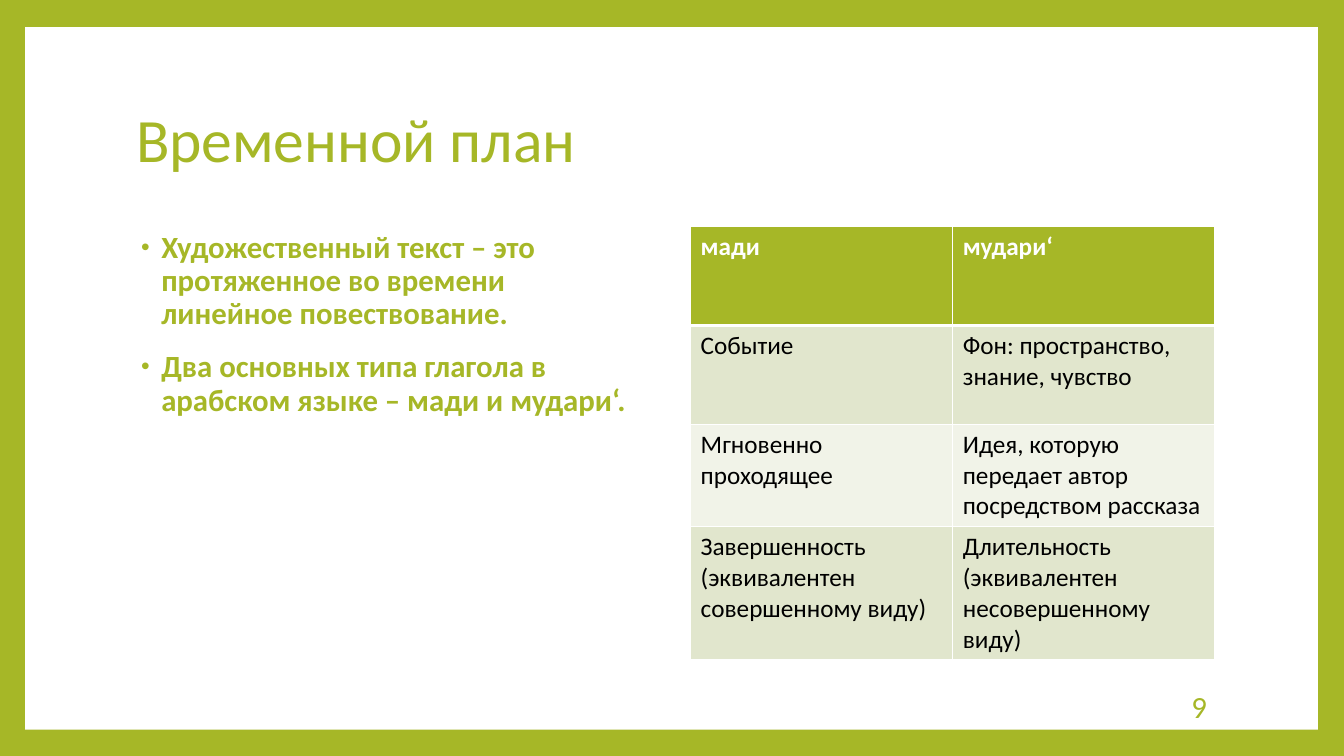
from typing import NamedTuple

from lxml.etree import SubElement
from pptx import Presentation
from pptx.dml.color import RGBColor
from pptx.enum.shapes import MSO_SHAPE
from pptx.enum.text import MSO_ANCHOR, MSO_AUTO_SIZE, PP_ALIGN
from pptx.oxml.ns import qn
from pptx.util import Inches, Pt

GREEN = RGBColor(0xA6, 0xB7, 0x27)
WHITE = RGBColor(0xFF, 0xFF, 0xFF)
BLACK = RGBColor(0, 0, 0)
DARK = RGBColor(0xE1, 0xE6, 0xCD)
LIGHT = RGBColor(0xF1, 0xF3, 0xE8)
FONT = "Calibri"


class Box(NamedTuple):
    left: float
    top: float
    width: float
    height: float


class Row(NamedTuple):
    past: str
    present: str
    fill: RGBColor = DARK
    color: RGBColor = BLACK
    bold: bool = False
    rule: float = 1


PANEL = Box(0.25, 0.27, 12.82, 6.97)
TITLE = Box(1.25, 0.67, 10.8, 1.48)
BODY = Box(1.25, 2.25, 5.2, 4.4)
TABLE = Box(6.85, 2.25, 5.2, 3.92)
NUMBER = Box(10.2, 6.81, 1.87, 0.4)

POINTS = [
    "Художественный текст – это протяженное во времени линейное повествование.",
    "Два основных типа глагола в арабском языке – мади и мудари‘.",
]
ROWS = [
    Row("мади", "мудари‘", GREEN, WHITE, True, 3),
    Row("Событие", "Фон: пространство, знание, чувство"),
    Row("Мгновенно проходящее",
        "Идея, которую передает автор посредством рассказа", LIGHT),
    Row("Завершенность (эквивалентен совершенному виду)",
        "Длительность (эквивалентен несовершенному виду)"),
]


def lengths(box: Box) -> list:
    return [Inches(side) for side in box]


def place(shape, box: Box) -> None:
    shape.left, shape.top, shape.width, shape.height = lengths(box)


def style(para, size: float, color: RGBColor, bold: bool = False) -> None:
    font = para.font
    font.name, font.size, font.bold = FONT, Pt(size), bold
    font.color.rgb = color


def bullet(para) -> None:
    props = para._p.get_or_add_pPr()
    props.set("marL", str(Inches(0.25)))
    props.set("indent", str(Inches(-0.2)))
    tint = SubElement(props, qn("a:buClr"))
    SubElement(tint, qn("a:srgbClr"), val=str(GREEN))
    SubElement(props, qn("a:buSzPct"), val="80000")
    SubElement(props, qn("a:buFont"), typeface="Arial")
    SubElement(props, qn("a:buChar"), char="•")


def border(cell, side: str, width: float) -> None:
    props = cell._tc.get_or_add_tcPr()
    line = SubElement(props, qn(f"a:ln{side}"), w=str(Pt(width)))
    fill = SubElement(line, qn("a:solidFill"))
    SubElement(fill, qn("a:srgbClr"), val=str(WHITE))


def add_grid(slide) -> None:
    grid = slide.shapes.add_table(len(ROWS), 2, *lengths(TABLE)).table
    above = 1
    for r, row in enumerate(ROWS):
        for c, text in enumerate((row.past, row.present)):
            cell = grid.cell(r, c)
            cell.text = text
            style(cell.text_frame.paragraphs[0], 18, row.color, row.bold)
            for side, width in zip("LRTB", (1, 1, above, row.rule)):
                border(cell, side, width)
            cell.fill.solid()
            cell.fill.fore_color.rgb = row.fill
        above = row.rule


def main() -> None:
    deck = Presentation()
    deck.slide_width, deck.slide_height = Inches(13.33), Inches(7.5)
    slide = deck.slides.add_slide(deck.slide_layouts[1])
    title, body = slide.placeholders

    # Green frame around a white panel
    back = slide.background.fill
    back.solid()
    back.fore_color.rgb = GREEN
    panel = slide.shapes.add_shape(MSO_SHAPE.RECTANGLE, *lengths(PANEL))
    panel.shadow.inherit = False
    panel.fill.solid()
    panel.fill.fore_color.rgb = WHITE
    panel.line.fill.background()
    title._element.addprevious(panel._element)

    # Title
    place(title, TITLE)
    frame = title.text_frame
    frame.text = "Временной план"
    frame.auto_size = MSO_AUTO_SIZE.NONE
    frame.vertical_anchor = MSO_ANCHOR.MIDDLE
    para = frame.paragraphs[0]
    para.alignment, para.line_spacing = PP_ALIGN.LEFT, 0.9
    style(para, 44, GREEN)

    # Bulleted list
    place(body, BODY)
    frame = body.text_frame
    frame.text = "\n".join(POINTS)
    frame.auto_size = MSO_AUTO_SIZE.NONE
    for para in frame.paragraphs:
        para.line_spacing, para.space_before = 0.9, Pt(14)
        bullet(para)
        style(para, 22, GREEN, True)

    # Table of verb types
    add_grid(slide)

    # Slide number
    frame = slide.shapes.add_textbox(*lengths(NUMBER)).text_frame
    frame.word_wrap = True
    frame.vertical_anchor = MSO_ANCHOR.MIDDLE
    frame.text = "9"
    para = frame.paragraphs[0]
    para.alignment = PP_ALIGN.RIGHT
    style(para, 22, GREEN)

    deck.save("out.pptx")


if __name__ == "__main__":
    main()
